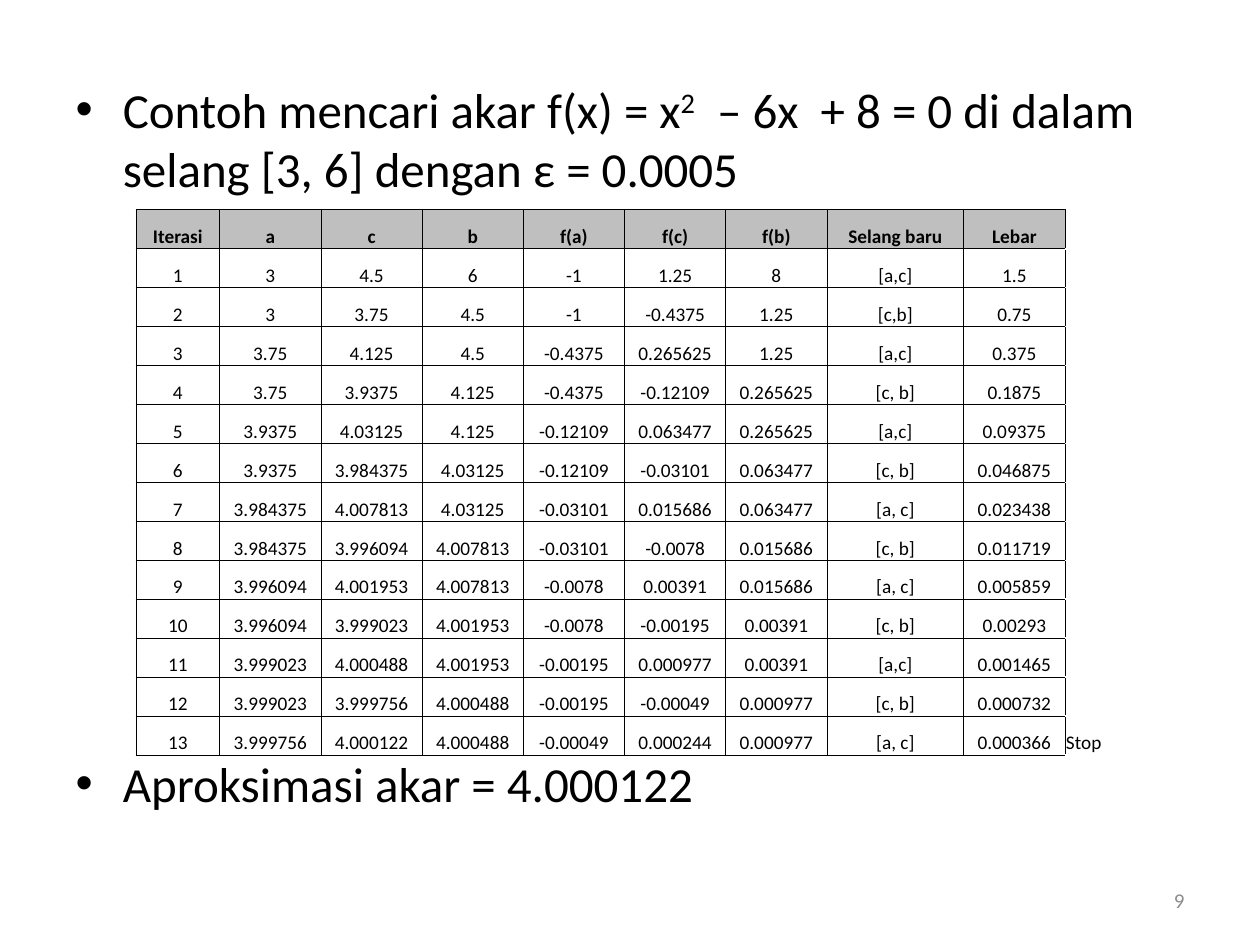
from lxml import etree
from pptx import Presentation
from pptx.dml.color import RGBColor
from pptx.enum import text as t
from pptx.oxml import ns
from pptx.util import Cm, Pt

HUES = {"ink": "000000", "head": "BFBFBF", "page": "8C8C8C"}
FONT = "Calibri"
ROWS = [
    ["Iterasi", "a", "c", "b", "f(a)", "f(c)", "f(b)", "Selang baru", "Lebar", ""],
    ["1", "3", "4.5", "6", "-1", "1.25", "8", "[a,c]", "1.5", ""],
    ["2", "3", "3.75", "4.5", "-1", "-0.4375", "1.25", "[c,b]", "0.75", ""],
    ["3", "3.75", "4.125", "4.5", "-0.4375", "0.265625", "1.25", "[a,c]", "0.375", ""],
    ["4", "3.75", "3.9375", "4.125", "-0.4375", "-0.12109", "0.265625", "[c, b]", "0.1875", ""],
    ["5", "3.9375", "4.03125", "4.125", "-0.12109", "0.063477", "0.265625", "[a,c]", "0.09375", ""],
    ["6", "3.9375", "3.984375", "4.03125", "-0.12109", "-0.03101", "0.063477", "[c, b]", "0.046875", ""],
    ["7", "3.984375", "4.007813", "4.03125", "-0.03101", "0.015686", "0.063477", "[a, c]", "0.023438", ""],
    ["8", "3.984375", "3.996094", "4.007813", "-0.03101", "-0.0078", "0.015686", "[c, b]", "0.011719", ""],
    ["9", "3.996094", "4.001953", "4.007813", "-0.0078", "0.00391", "0.015686", "[a, c]", "0.005859", ""],
    ["10", "3.996094", "3.999023", "4.001953", "-0.0078", "-0.00195", "0.00391", "[c, b]", "0.00293", ""],
    ["11", "3.999023", "4.000488", "4.001953", "-0.00195", "0.000977", "0.00391", "[a,c]", "0.001465", ""],
    ["12", "3.999023", "3.999756", "4.000488", "-0.00195", "-0.00049", "0.000977", "[c, b]", "0.000732", ""],
    ["13", "3.999756", "4.000122", "4.000488", "-0.00049", "0.000244", "0.000977", "[a, c]", "0.000366", "Stop"],
]
WIDTHS = [1.69] + [2.04] * 6 + [2.76] + [2.04] * 2


def add_run(para, words, size, hue="ink", bold=False):
    run = para.add_run()
    run.text = words
    font = run.font
    font.name, font.size, font.bold = FONT, Pt(size), bold
    font.color.rgb = RGBColor.from_string(HUES[hue])
    return run


def add_points(slide):
    body = slide.placeholders[1]
    body.left, body.top, body.width, body.height = Cm(1.27), Cm(1.47), Cm(22.86), Cm(15.54)
    frame = body.text_frame
    task = frame.paragraphs[0]
    add_run(task, "Contoh mencari akar f(x) = x", 28)
    power = add_run(task, "2", 28)
    power.font._element.set("baseline", "30000")
    add_run(task, "  – 6x  + 8 = 0 di dalam selang [3, 6] dengan ε = 0.0005", 28)
    result = frame.add_paragraph()
    result.space_before = Pt(318)
    add_run(result, "Aproksimasi akar = 4.000122", 28)


def add_edges(cell, sides):
    props = cell._tc.get_or_add_tcPr()
    for side in sides:
        line = etree.SubElement(props, ns.qn("a:ln" + side), w=str(Pt(0.5)))
        fill = etree.SubElement(line, ns.qn("a:solidFill"))
        etree.SubElement(fill, ns.qn("a:srgbClr"), val=HUES["ink"])


def fill_cell(cell, words, head, last):
    cell.margin_left = cell.margin_right = Cm(0.02)
    cell.margin_top = cell.margin_bottom = 0
    cell.vertical_anchor = t.MSO_ANCHOR.BOTTOM
    add_edges(cell, "L" if last else "LRTB")
    if head and not last:
        cell.fill.solid()
        cell.fill.fore_color.rgb = RGBColor.from_string(HUES["head"])
    else:
        cell.fill.background()
    para = cell.text_frame.paragraphs[0]
    para.alignment = t.PP_ALIGN.LEFT if last else t.PP_ALIGN.CENTER
    if words:
        add_run(para, words, 11, bold=head)


def add_grid(slide):
    frame = slide.shapes.add_table(
        len(ROWS), len(WIDTHS), Cm(2.74), Cm(4.23), Cm(sum(WIDTHS)), Cm(11))
    table = frame.table
    table.first_row = table.horz_banding = False
    for col, width in zip(table.columns, WIDTHS):
        col.width = Cm(width)
    for r, row in enumerate(ROWS):
        for c, words in enumerate(row):
            fill_cell(table.cell(r, c), words, r == 0, c == len(WIDTHS) - 1)


def add_page(slide):
    box = slide.shapes.add_textbox(Cm(18.2), Cm(17.65), Cm(5.93), Cm(1.01))
    frame = box.text_frame
    frame.word_wrap = True
    frame.vertical_anchor = t.MSO_ANCHOR.MIDDLE
    para = frame.paragraphs[0]
    para.alignment = t.PP_ALIGN.RIGHT
    add_run(para, "9", 12, "page")


def main():
    deck = Presentation()
    deck.slide_width, deck.slide_height = Cm(25.4), Cm(19.05)
    slide = deck.slides.add_slide(deck.slide_layouts[1])
    title = slide.shapes.title._element
    title.getparent().remove(title)
    add_points(slide)
    add_grid(slide)
    add_page(slide)
    deck.save("out.pptx")


if __name__ == "__main__":
    main()
